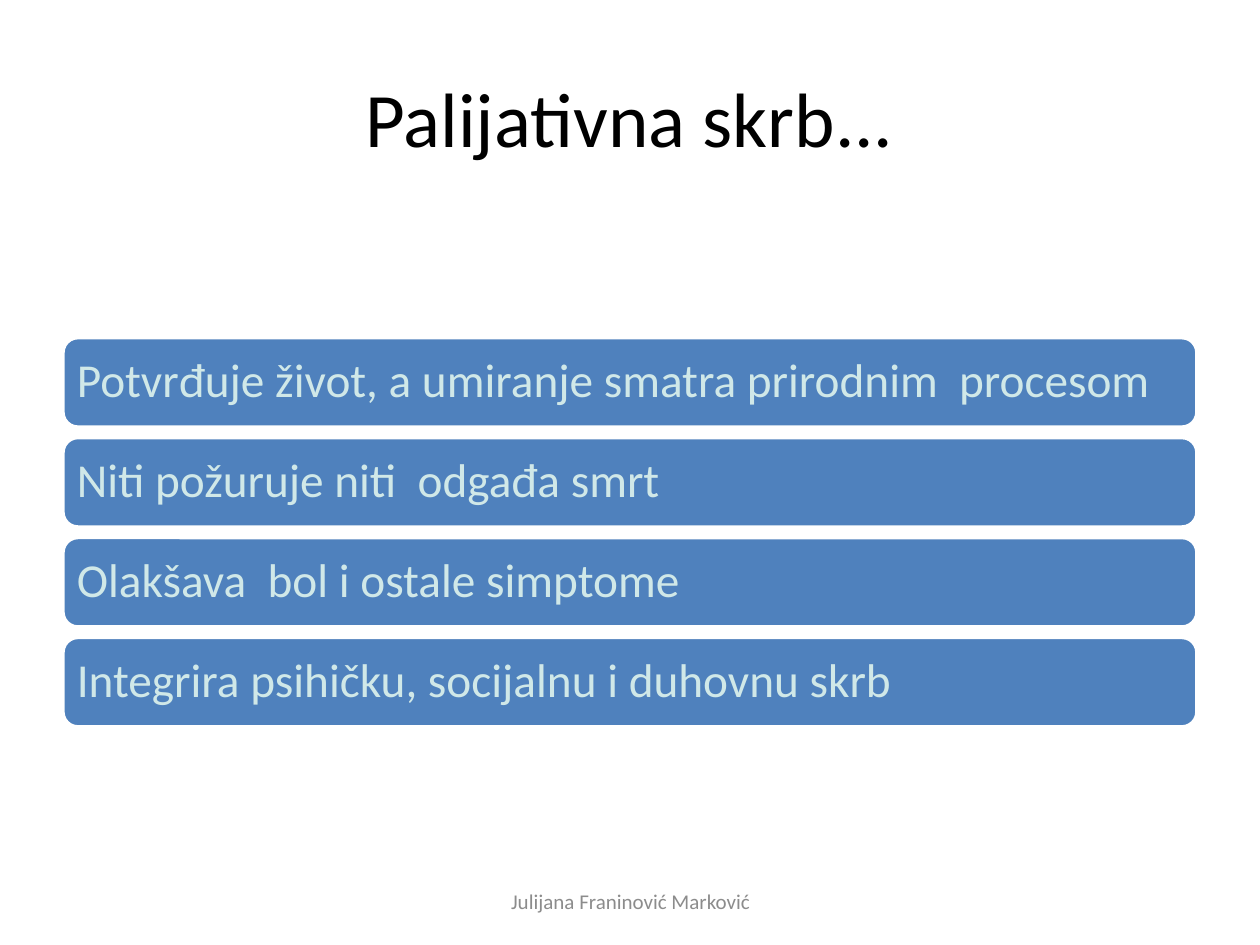
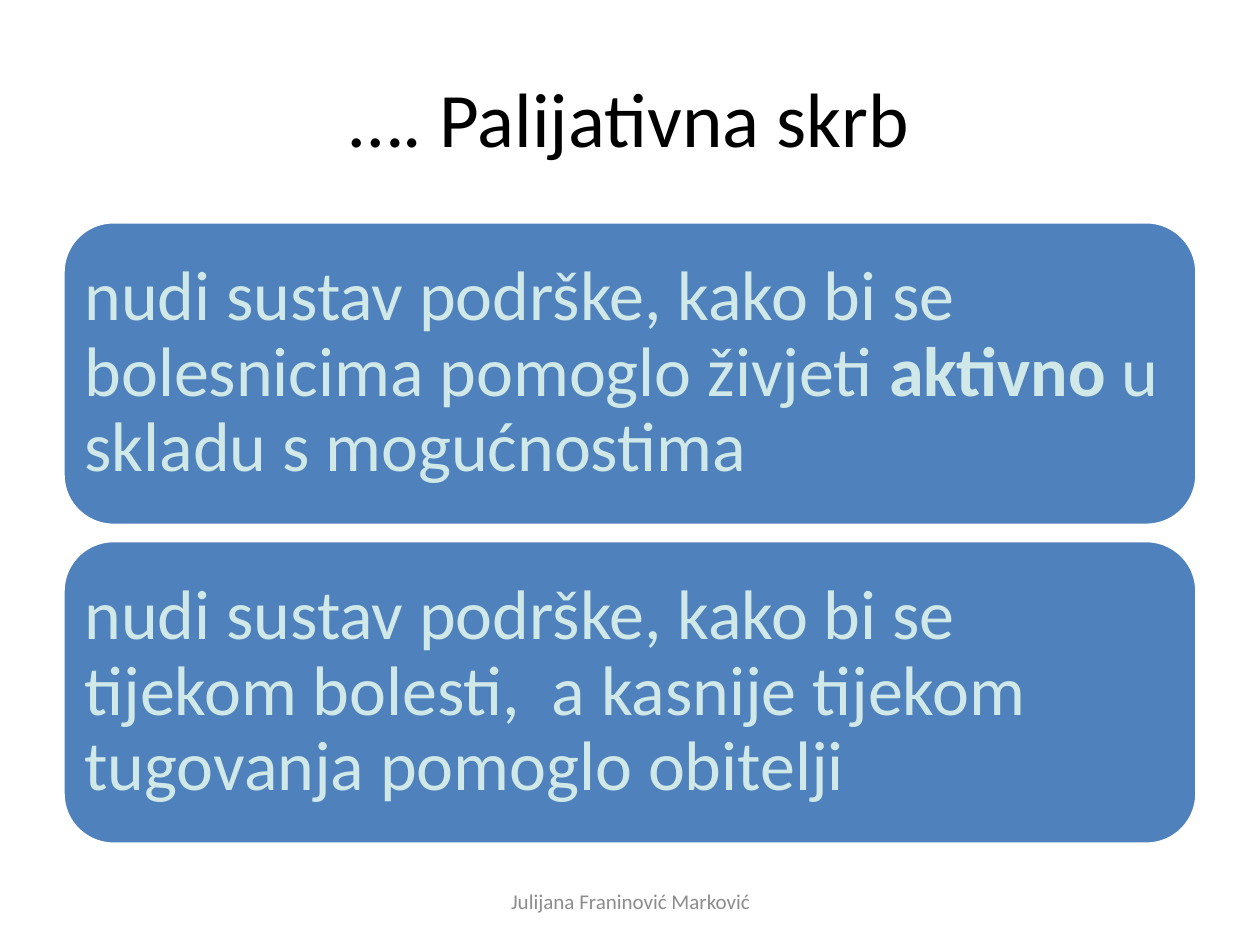
from pptx import Presentation
from pptx.dml.color import RGBColor as RGB
from pptx.enum.shapes import MSO_SHAPE as SHAPE
from pptx.enum.text import MSO_ANCHOR as ANCHOR, PP_ALIGN as ALIGN
from pptx.util import Inches, Pt

COLORS = {"paper": "FFFFFF", "title": "000000", "panel": "4F81BD",
          "pale": "D0E8E8", "footer": "8C8C8C"}
FONT = "Calibri"
WIDTH, HEIGHT = 10, 7.5
MARGIN = 0.05 * WIDTH
CONTENT = WIDTH - 2 * MARGIN
CORNER = 0.1667    # corner radius as a share of panel height
CORNER_PAD = 0.29  # share of the radius that the shape itself keeps clear of text

# Each panel is a list of (text, bold) runs
SLIDES = [
    {"title": "Palijativna skrb...", "top": 2.68, "height": 0.71, "pitch": 0.793,
     "size": 27, "inset": 0.11,
     "panels": [[("Potvrđuje život, a umiranje smatra prirodnim  procesom", False)],
                [("Niti požuruje niti  odgađa smrt", False)],
                [("Olakšava  bol i ostale simptome", False)],
                [("Integrira psihičku, socijalnu i duhovnu skrb", False)]]},
    {"title": "…. Palijativna skrb", "top": 1.76, "height": 2.41, "pitch": 2.53,
     "size": 40, "inset": 0.17,
     "panels": [[("nudi sustav podrške, kako bi se bolesnicima pomoglo živjeti ", False),
                 ("aktivno ", True), ("u skladu s mogućnostima", False)],
                [("nudi sustav podrške, kako bi se tijekom bolesti,  a kasnije "
                  "tijekom tugovanja pomoglo obitelji", False)]]},
]


def write(frame, runs, size, color, align, inset_x=0.1, inset_y=0.05, spacing=1.0):
    layout = {"word_wrap": True, "vertical_anchor": ANCHOR.MIDDLE,
              "margin_left": Inches(inset_x), "margin_right": Inches(inset_x),
              "margin_top": Inches(inset_y), "margin_bottom": Inches(inset_y)}
    for name, value in layout.items():
        setattr(frame, name, value)
    paragraph = frame.paragraphs[0]
    paragraph.alignment = align
    paragraph.line_spacing = spacing
    for text, bold in runs:
        run = paragraph.add_run()
        run.text = text
        for name, value in {"name": FONT, "size": Pt(size), "bold": bold}.items():
            setattr(run.font, name, value)
        run.font.color.rgb = RGB.from_string(COLORS[color])


deck = Presentation()
deck.slide_width, deck.slide_height = Inches(WIDTH), Inches(HEIGHT)

for content in SLIDES:
    slide = deck.slides.add_slide(deck.slide_layouts[6])
    slide.background.fill.solid()
    slide.background.fill.fore_color.rgb = RGB.from_string(COLORS["paper"])

    # Title and footer
    captions = [
        (content["title"], 44, "title", (MARGIN, 0.04 * HEIGHT, CONTENT, HEIGHT / 6)),
        ("Julijana Franinović Marković", 12, "footer", (3.42, 6.95, 3.17, 0.4)),
    ]
    for text, size, color, place in captions:
        caption = slide.shapes.add_textbox(*map(Inches, place))
        write(caption.text_frame, [(text, False)], size, color, ALIGN.CENTER)

    # Stacked statement panels
    height = content["height"]
    inset = content["inset"] - CORNER * CORNER_PAD * height
    for row, runs in enumerate(content["panels"]):
        top = content["top"] + row * content["pitch"]
        panel = slide.shapes.add_shape(SHAPE.ROUNDED_RECTANGLE,
                                       *map(Inches, (MARGIN, top, CONTENT, height)))
        panel.shadow.inherit = False
        panel.adjustments[0] = CORNER
        panel.fill.solid()
        panel.fill.fore_color.rgb = RGB.from_string(COLORS["panel"])
        panel.line.color.rgb = RGB.from_string(COLORS["paper"])
        panel.line.width = Pt(2)
        write(panel.text_frame, runs, content["size"], "pale", ALIGN.LEFT,
              inset, inset, 0.9)

deck.save("out.pptx")
